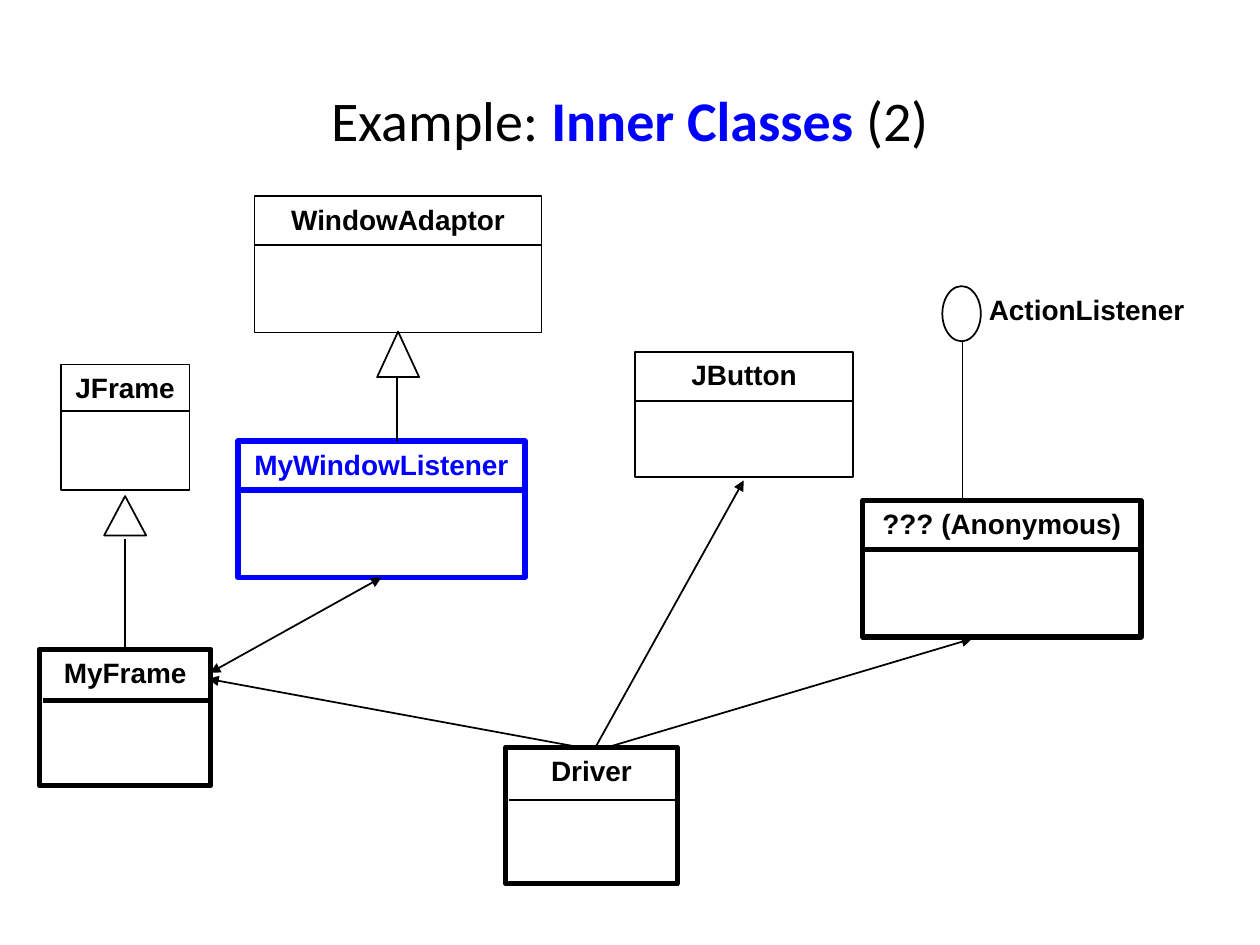
import pptx
import pptx.util
import pptx.dml.color
import pptx.enum.shapes
import pptx.enum.text
import pptx.oxml.ns
import lxml.etree

Pt = pptx.util.Pt
Shape = pptx.enum.shapes.MSO_SHAPE
Align = pptx.enum.text.PP_ALIGN
Anchor = pptx.enum.text.MSO_ANCHOR
BLACK, BLUE, WHITE = "000000", "0000FF", "FFFFFF"


def paint(target, color):
    """Colour a font, a line or a fill; a fill is made solid first."""
    if hasattr(target, "solid"):
        target.solid()
        target = target.fore_color
    else:
        target = target.color
    target.rgb = pptx.dml.color.RGBColor.from_string(color)


def add_line(shapes, start, end, color=BLACK, width=1, arrows=()):
    """Draw a line; arrows names the ends with a triangle: headEnd is the start."""
    line = shapes.add_connector(
        pptx.enum.shapes.MSO_CONNECTOR.STRAIGHT, *(Pt(v) for v in (*start, *end)))
    paint(line.line, color)
    line.line.width = Pt(width)
    qn = pptx.oxml.ns.qn
    for arrow in arrows:
        lxml.etree.SubElement(line.line._get_or_add_ln(), qn(f"a:{arrow}"), type="triangle")
    lxml.etree.SubElement(line._element.spPr, qn("a:effectLst"))


deck = pptx.Presentation()
deck.slide_width, deck.slide_height = Pt(720), Pt(540)
slide = deck.slides.add_slide(deck.slide_layouts[6])

# Title
title = slide.shapes.add_textbox(Pt(54), Pt(38), Pt(612), Pt(60))
title.text_frame.word_wrap = True
title.text_frame.vertical_anchor = Anchor.MIDDLE
heading = title.text_frame.paragraphs[0]
heading.alignment = Align.CENTER
for words, color, bold in [("Example: ", BLACK, False),
                           ("Inner Classes ", BLUE, True),
                           ("(2)", BLACK, False)]:
    run = heading.add_run()
    run.text = words
    run.font.name, run.font.size, run.font.bold = "Calibri", Pt(32), bold
    paint(run.font, color)

# Classes: name, left, top, width, height, colour, border,
# divider's distance from the top, divider's indent, divider's width
classes = [
    ("MyFrame", 22.5, 371, 98, 78, BLACK, 3, 29.5, 2, 3),
    ("Driver", 289, 427, 98, 78, BLACK, 3, 30, 2, 1),
    ("JFrame", 34.75, 208.25, 73.5, 72, BLACK, 1, 26.5, 0, 1),
    ("MyWindowListener", 136, 252, 164, 78, BLUE, 3, 28, 0, 3),
    ("WindowAdaptor", 145.5, 112, 164, 78, BLACK, 1, 28, 0, 1),
    ("JButton", 363, 201, 124.5, 71.5, BLACK, 1, 28, 0, 1),
    ("??? (Anonymous)", 493, 286, 159, 78, BLACK, 3, 28, 0, 3),
]
names = []
for name, left, top, width, height, color, border, drop, indent, rule in classes:
    group = slide.shapes.add_group_shape()
    box = group.shapes.add_shape(Shape.RECTANGLE, Pt(left), Pt(top), Pt(width), Pt(height))
    box.shadow.inherit = False
    box.fill.background()
    paint(box.line, color)
    box.line.width = Pt(border)
    box.text_frame.text = name
    box.text_frame.word_wrap = True
    box.text_frame.vertical_anchor = Anchor.TOP
    names.append((box.text_frame.paragraphs[0], Align.CENTER, color))
    add_line(group.shapes, (left + indent, top + drop), (left + width, top + drop), color, rule)

# Interface
interface = slide.shapes.add_textbox(Pt(558), Pt(163.5), Pt(130), Pt(26.5))
interface.text_frame.word_wrap = True
interface.text_frame.text = "ActionListener"
names.append((interface.text_frame.paragraphs[0], Align.LEFT, BLACK))

for paragraph, alignment, color in names:
    paragraph.alignment = alignment
    font = paragraph.runs[0].font
    font.name, font.size, font.bold = "Arial", Pt(16), True
    paint(font, color)

# Inheritance stems and associations
for start, end, arrows in [
    ((71.5, 308), (71.5, 371), ()),
    ((227, 215.5), (227, 252), ()),
    ((550, 195), (550, 286), ()),
    ((334, 427.5), (119, 388), ["tailEnd"]),
    ((120, 384.5), (218, 330), ["headEnd", "tailEnd"]),
    ((345.5, 427.5), (555.5, 365), ["tailEnd"]),
    ((340, 427.5), (425, 274.5), ["tailEnd"]),
]:
    add_line(slide.shapes, start, end, arrows=arrows)

# Inheritance triangles and the interface's lollipop
for kind, left, top, width, height in [
    (Shape.ISOSCELES_TRIANGLE, 59.5, 283.5, 24, 22.5),
    (Shape.ISOSCELES_TRIANGLE, 215.5, 189.5, 24, 26),
    (Shape.OVAL, 538.5, 163.5, 22, 31.5),
]:
    symbol = slide.shapes.add_shape(kind, Pt(left), Pt(top), Pt(width), Pt(height))
    symbol.shadow.inherit = False
    paint(symbol.fill, WHITE)
    paint(symbol.line, BLACK)
    symbol.line.width = Pt(1)

deck.save("out.pptx")
